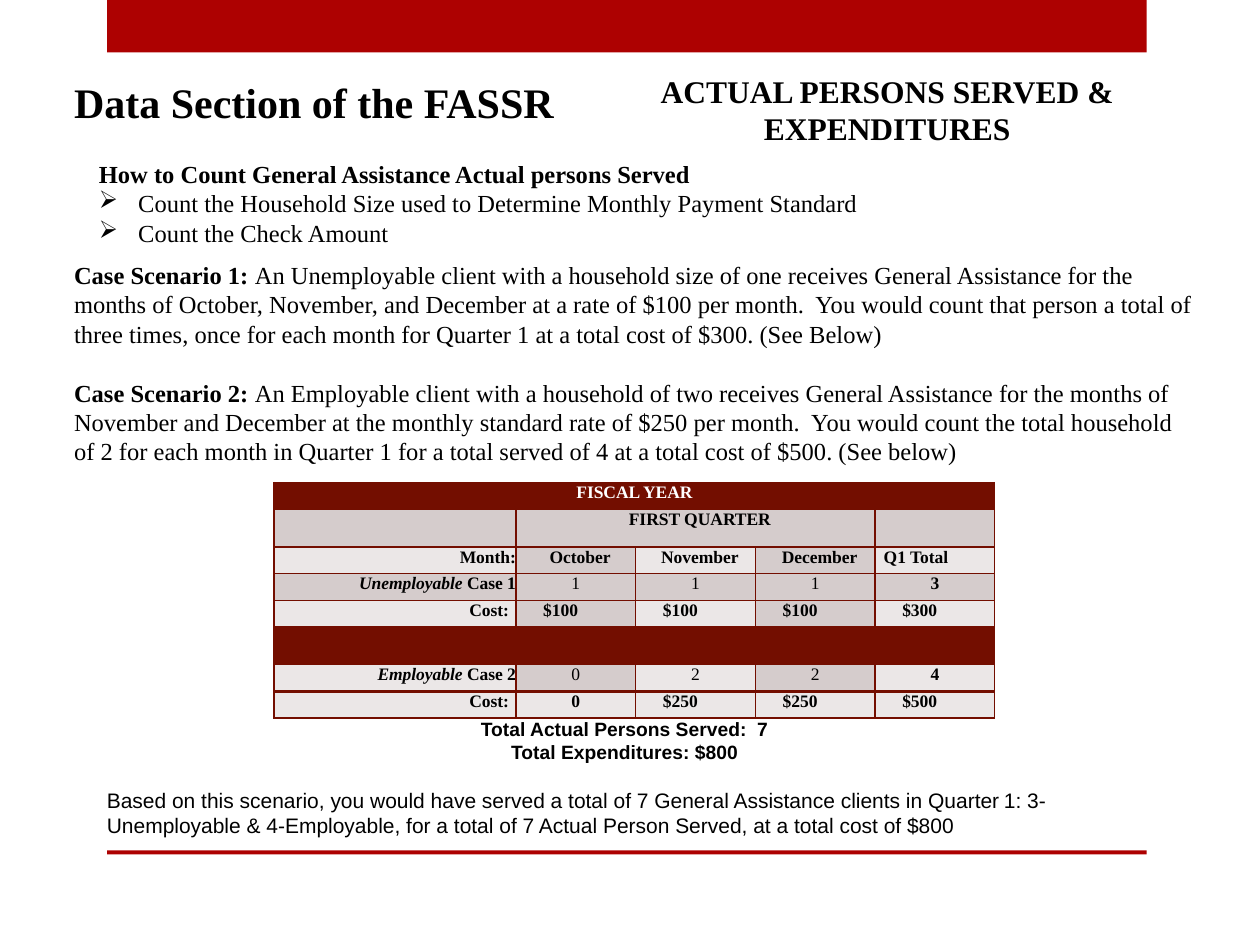
from dataclasses import dataclass
from lxml import etree
from pptx import Presentation
from pptx.dml.color import RGBColor
from pptx.enum.shapes import MSO_SHAPE
from pptx.enum.text import MSO_ANCHOR, PP_ALIGN
from pptx.oxml.ns import qn
from pptx.util import Pt

RECT = MSO_SHAPE.RECTANGLE
TOP, MIDDLE = MSO_ANCHOR.TOP, MSO_ANCHOR.MIDDLE
LEFT, CENTER, RIGHT = PP_ALIGN.LEFT, PP_ALIGN.CENTER, PP_ALIGN.RIGHT


@dataclass(frozen=True)
class Theme:
    red: str = "AD0101"
    maroon: str = "730E00"
    dark: str = "D5CCCC"
    light: str = "EBE7E7"
    ink: str = "000000"
    white: str = "FFFFFF"
    serif: str = "Times New Roman"
    sans: str = "Arial"
    title: float = 24
    head: float = 18
    body: float = 14
    note: float = 12
    total: float = 11
    grid: float = 10
    thin: float = 6


def put(item, values):
    for name, value in values.items():
        setattr(item, name, value)


class Page:
    def __init__(self, slide, theme):
        self.slide = slide
        self.theme = theme

    def bar(self, left, top, width, height):
        bar = self.slide.shapes.add_shape(RECT, Pt(left), Pt(top), Pt(width), Pt(height))
        bar.shadow.inherit = False
        bar.fill.solid()
        bar.fill.fore_color.rgb = RGBColor.from_string(self.theme.red)
        bar.line.fill.background()

    def lay(self, para, runs, look, form):
        put(para, form)
        for text, extra in runs:
            run = para.add_run()
            run.text = text
            style = {"name": self.theme.serif, "bold": False} | look | extra
            color = style.pop("color", self.theme.ink)
            style["size"] = Pt(style["size"])
            put(run.font, style)
            run.font.color.rgb = RGBColor.from_string(color)

    def text(self, box, paras, look, anchor=TOP):
        frame = self.slide.shapes.add_textbox(*map(Pt, box)).text_frame
        put(frame, {"word_wrap": True, "vertical_anchor": anchor})
        for i, (runs, form) in enumerate(paras):
            para = frame.add_paragraph() if i else frame.paragraphs[0]
            self.lay(para, runs, look, form)
        return frame

    def bullet(self, para, mark, indent):
        props = para._p.get_or_add_pPr()
        props.set("marL", str(Pt(indent)))
        props.set("indent", str(Pt(-indent)))
        etree.SubElement(props, qn("a:buChar")).set("char", mark)

    def edge(self, cell, top):
        props = cell._tc.get_or_add_tcPr()
        for side in "LRTB":
            line = etree.SubElement(props, qn(f"a:ln{side}"))
            line.set("w", str(Pt(top if side == "T" else 1)))
            fill = etree.SubElement(line, qn("a:solidFill"))
            etree.SubElement(fill, qn("a:srgbClr")).set("val", self.theme.maroon)

    def table(self, left, top, widths, height, rows, shades, spans):
        shape = self.slide.shapes.add_table(
            len(rows), len(widths), Pt(left), Pt(top), Pt(sum(widths)), Pt(height * len(rows)))
        grid = shape.table
        put(grid, {"first_row": False, "horz_banding": False})
        for column, width in zip(grid.columns, widths):
            column.width = Pt(width)
        fills = {"M": self.theme.maroon, "D": self.theme.dark, "L": self.theme.light}
        for r, (row, shade) in enumerate(zip(rows, shades)):
            grid.rows[r].height = Pt(height)
            for c, (entry, code) in enumerate(zip(row, shade)):
                runs, align, start, end = entry
                cell = grid.cell(r, c)
                put(cell, {"margin_left": Pt(start), "margin_right": Pt(end),
                           "margin_top": 0, "margin_bottom": 0})
                self.edge(cell, 2 if r == len(rows) - 1 else 1)
                cell.fill.solid()
                cell.fill.fore_color.rgb = RGBColor.from_string(fills[code])
                form = {"alignment": align, "line_spacing": Pt(11.3)}
                self.lay(cell.text_frame.paragraphs[0], runs,
                         {"size": self.theme.grid, "bold": True}, form)
        for row, first, last in spans:
            grid.cell(row, first).merge(grid.cell(row, last))


def entry(text, align=CENTER, start=0, end=0, **look):
    return [(text, look)], align, start, end


def case(kind, label):
    return [(kind, {"italic": True}), (label, {})], RIGHT, 0, 0


def counts(label, values, total):
    return [label, *(entry(v, bold=False) for v in values), entry(total)]


def costs(values):
    cells = [entry(v, LEFT, 15.6) if v.startswith("$") else entry(v) for v in values]
    return [entry("Cost:", RIGHT, end=4), *cells]


def main():
    deck = Presentation()
    put(deck, {"slide_width": Pt(720), "slide_height": Pt(540)})
    theme = Theme()
    page = Page(deck.slides.add_slide(deck.slide_layouts[6]), theme)
    bold = {"bold": True}

    for top, height in ((0, 30), (486, 2.2)):
        page.bar(61.2, top, 594, height)

    page.text((35.2, 28, 301, 60), [([("Data Section of the FASSR", bold)], {})],
              {"size": theme.title}, MIDDLE)
    page.text((360, 37.4, 294, 51),
              [([("ACTUAL PERSONS SERVED & EXPENDITURES", bold)], {"alignment": CENTER})],
              {"size": theme.head})

    guide = page.text((49.4, 87.2, 576, 58), [
        ([("How to Count General Assistance Actual persons Served", bold)], {}),
        ([("Count the Household Size used to Determine Monthly Payment Standard", {})], {}),
        ([("Count the Check Amount", {})], {}),
    ], {"size": theme.body})
    for para in guide.paragraphs[1:]:
        page.bullet(para, "➢", 22.5)

    page.text((35.2, 145, 654.5, 126), [
        ([("Case Scenario 1: ", bold),
          ("An Unemployable client with a household size of one receives General Assistance "
           "for the months of October, November, and December at a rate of $100 per month.  "
           "You would count that person a total of three times, once for each month for "
           "Quarter 1 at a total cost of $300. (See Below)", {})], {}),
        ([("Case Scenario 2: ", bold),
          ("An Employable client with a household of two receives General Assistance for the "
           "months of November and December at the monthly standard rate of $250 per month.  "
           "You would count the total household of 2 for each month in Quarter 1 for a total "
           "served of 4 at a total cost of $500. (See below)", {})], {"space_before": Pt(16.8)}),
    ], {"size": theme.body})

    void = ([], LEFT, 0, 0)
    months = [entry(m, start=5) for m in ("October", "November", "December")]
    rows = [
        [entry("FISCAL YEAR", color=theme.white)] + [void] * 4,
        [void, entry("FIRST QUARTER", start=5), void, void, void],
        [entry("Month:", RIGHT), *months, entry("Q1 Total", LEFT, 5)],
        counts(case("Unemployable ", "Case 1"), "111", "3"),
        costs(("$100", "$100", "$100", "$300")),
        [void] * 5,
        counts(case("Employable ", "Case 2"), "022", "4"),
        costs(("0", "$250", "$250", "$500")),
    ]
    shades = ("MMMMM", "DDDDD", "LDLDL", "DDDDD", "LDLDL", "MMMMM", "LDLDL", "LLLLL")
    page.table(156.6, 275.8, [138.2] + [68.4] * 4, 15.2, rows, shades,
               ((0, 0, 4), (1, 1, 3), (5, 0, 4)))

    page.text((54, 405.4, 606, 77.8), [
        ([("Total Actual Persons Served:  7", bold)], {"alignment": CENTER}),
        ([("Total Expenditures: $800", bold)], {"alignment": CENTER}),
        ([("Based on this scenario, you would have served a total of 7 General Assistance "
           "clients in Quarter", {"size": theme.note}),
          (" ", {"size": theme.thin}),
          ("1: 3-Unemployable & 4-Employable, for a total of 7 Actual Person Served, at a "
           "total cost of $800", {"size": theme.note})], {"space_before": Pt(13.8)}),
    ], {"size": theme.total, "name": theme.sans}, MIDDLE)

    deck.save("out.pptx")


if __name__ == "__main__":
    main()
